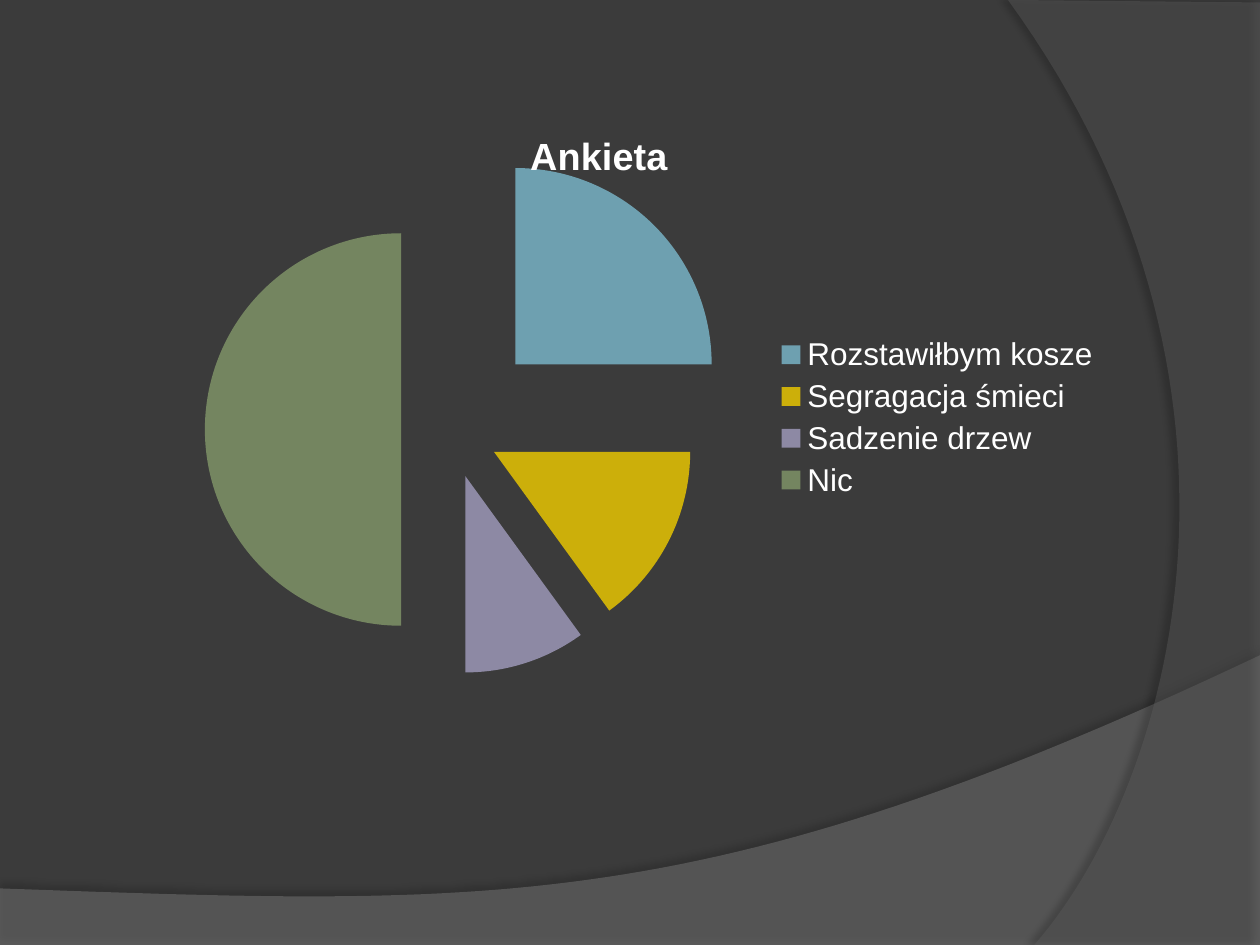
import lxml.etree
import pptx
import pptx.chart.data
import pptx.dml.color
import pptx.enum.chart
import pptx.oxml
import pptx.oxml.ns
import pptx.util

Cm = pptx.util.Cm
qn = pptx.oxml.ns.qn
TEXT = {"name": "Arial", "size": pptx.util.Pt(18), "bold": False}
TITLE = {"name": "Arial", "size": pptx.util.Pt(21.6), "bold": True}
VOTES = [
    ("Rozstawiłbym kosze", 25, "6EA0B0"),
    ("Segragacja śmieci", 15, "CCAF0A"),
    ("Sadzenie drzew", 10, "8D89A4"),
    ("Nic", 50, "748560"),
]


def paint(fill, tint):
    fill.solid()
    fill.fore_color.rgb = pptx.dml.color.RGBColor.from_string(tint)


def style(font, form):
    for key, val in form.items():
        setattr(font, key, val)
    paint(font.fill, "FFFFFF")


def add(root, tag, **attrs):
    node = lxml.etree.SubElement(root, qn(tag))
    for key, val in attrs.items():
        node.set(key, str(val))
    return node


def curve(a, b, c, d, steps=60):
    """Points along a cubic curve."""
    for i in range(steps + 1):
        t = i / steps
        u = 1 - t
        yield tuple(u**3 * p + 3 * u * u * t * q + 3 * u * t * t * r + t**3 * s
                    for p, q, r, s in zip(a, b, c, d))


def add_wave(slide, box, edge, bend, tint, alpha, shade, turn):
    """Sheer panel with one curved side and a soft shadow."""
    left, top = box
    spots = [(Cm(left + x), Cm(top + y)) for x, y in edge + list(curve(*bend))]
    pen = slide.shapes.build_freeform(*spots[0])
    pen.add_line_segments(spots[1:], close=True)
    wave = pen.convert_to_shape()
    wave.line.fill.background()
    paint(wave.fill, tint)
    props = wave._element.spPr
    add(props.find(".//" + qn("a:srgbClr")), "a:alpha", val=alpha * 1000)
    glow = add(add(props, "a:effectLst"), "a:outerShdw", blurRad=pptx.util.Pt(4),
               dist=pptx.util.Pt(4), dir=turn * 60000, algn="ctr", rotWithShape=0)
    add(add(glow, "a:srgbClr", val="000000"), "a:alpha", val=shade * 1000)


def add_back(slide):
    paint(slide.background.fill, "3B3B3B")
    # Band along the foot
    add_wave(slide, (0, 13.21), [(0, 4.7), (0, 5.87), (25.4, 5.87)],
             [(25.4, 0), (14.2, 5.31), (9.93, 5.05), (0, 4.7)],
             "7F7F7F", 45, 35, 270)
    # Panel down the right side
    add_wave(slide, (20.32, 0), [(5.08, 0.05), (5.08, 19.05)],
             [(0.53, 19.05), (3.43, 15.72), (5.54, 7.62), (0, 0)],
             "5E5E5E", 40, 45, 180)


def add_pie(slide, box):
    names, vals, tints = zip(*VOTES)
    data = pptx.chart.data.CategoryChartData()
    data.categories = names
    data.add_series("Ankieta", vals)
    chart = slide.shapes.add_chart(pptx.enum.chart.XL_CHART_TYPE.PIE,
                                   *map(Cm, box), data).chart
    style(chart.font, TEXT)

    # Title and legend
    chart.has_title = True
    chart.chart_title.text_frame.text = "Ankieta"
    style(chart.chart_title.text_frame.paragraphs[0].runs[0].font, TITLE)
    chart.has_legend = True
    chart.legend.position = pptx.enum.chart.XL_LEGEND_POSITION.RIGHT
    chart.legend.include_in_layout = False

    # Slices, the first one pulled out further
    plot = chart.plots[0]
    plot.vary_by_categories = True
    row = plot.series[0]
    for i, tint in enumerate(tints):
        paint(row.points[i].format.fill, tint)
    first = row._element.find(qn("c:dPt"))
    for node, burst in ((first, 47), (row._element, 25)):
        part = pptx.oxml.parse_xml(
            f'<c:explosion {pptx.oxml.ns.nsdecls("c")} val="{burst}"/>')
        spot = node.find(qn("c:spPr"))
        if spot is None:
            spot = first
        spot.addprevious(part)

    # Place of the pie within the chart
    area = chart._chartSpace.chart.plotArea
    for old in area.findall(qn("c:layout")):
        area.remove(old)
    frame = lxml.etree.Element(qn("c:layout"))
    area.insert(0, frame)
    grid = add(frame, "c:manualLayout")
    for tag, val in (("layoutTarget", "inner"), ("xMode", "edge"), ("yMode", "edge"),
                     ("x", 0.019), ("y", 0.126), ("w", 0.673), ("h", 0.787)):
        add(grid, "c:" + tag, val=val)


def main():
    deck = pptx.Presentation()
    deck.slide_width, deck.slide_height = Cm(25.4), Cm(19.05)
    slide = deck.slides.add_slide(deck.slide_layouts[6])
    add_back(slide)
    add_pie(slide, (1.7, 2.13, 20.75, 12.57))
    deck.save("out.pptx")


if __name__ == "__main__":
    main()
